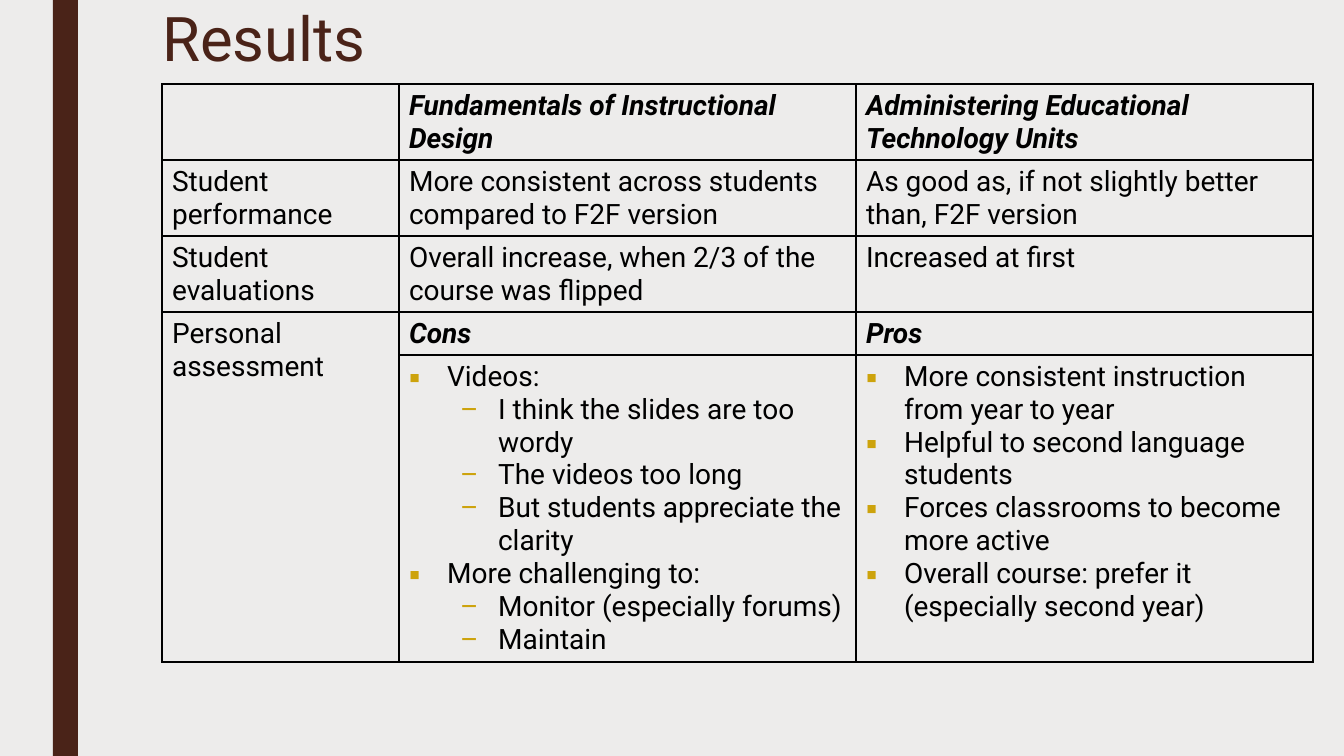
from lxml import etree
from pptx import Presentation
from pptx.dml.color import RGBColor
from pptx.enum.shapes import MSO_SHAPE
from pptx.enum.text import MSO_ANCHOR, MSO_AUTO_SIZE, PP_ALIGN
from pptx.oxml.ns import qn
from pptx.util import Emu, Pt

RECT = MSO_SHAPE.RECTANGLE
TOP, MIDDLE, BOTTOM = MSO_ANCHOR.TOP, MSO_ANCHOR.MIDDLE, MSO_ANCHOR.BOTTOM
LEFT = PP_ALIGN.LEFT
NO_AUTOFIT = MSO_AUTO_SIZE.NONE

EMU_PER_PX = 914400 / 100.8
FONT = "Roboto"
COLORS = {
    "background": "EDECEB",
    "brown": "4A2318",
    "black": "000000",
    "gold": "CDA30C",
}
COLUMN_WIDTHS = [237, 457, 457]
ROW_HEIGHTS = [76, 76, 76, 43, 307]
EMPHASIS_ROWS = (0, 3)
BULLETS = ["▪", "–"]
BULLET_MARGINS = [38, 89]
HANGING = 38

ROWS = [
    ["", "Fundamentals of Instructional Design", "Administering Educational Technology Units"],
    [
        "Student performance",
        "More consistent across students compared to F2F version",
        "As good as, if not slightly better than, F2F version",
    ],
    ["Student evaluations", "Overall increase, when 2/3 of the course was flipped", "Increased at first"],
    ["Personal assessment", "Cons", "Pros"],
]
# Each list item is (level, text).
CONS = [
    (0, "Videos:"),
    (1, "I think the slides are too wordy"),
    (1, "The videos too long"),
    (1, "But students appreciate the clarity"),
    (0, "More challenging to:"),
    (1, "Monitor (especially forums)"),
    (1, "Maintain"),
]
PROS = [
    (0, "More consistent instruction from year to year"),
    (0, "Helpful to second language students"),
    (0, "Forces classrooms to become more active"),
    (0, "Overall course: prefer it (especially second year)"),
]


def px(n):
    return Emu(round(n * EMU_PER_PX))


def format_runs(p, size, color, emphasis=False):
    for r in p.runs:
        r.font.name = FONT
        r.font.size = Pt(size)
        r.font.bold = r.font.italic = emphasis
        r.font.color.rgb = RGBColor.from_string(COLORS[color])


prs = Presentation()
prs.slide_width, prs.slide_height = px(1344), px(756)
s = prs.slides.add_slide(prs.slide_layouts[5])
s.background.fill.solid()
s.background.fill.fore_color.rgb = RGBColor.from_string(COLORS["background"])

# Side bar
bar = s.shapes.add_shape(RECT, px(53), px(0), px(25), px(756))
bar.shadow.inherit = False
bar.fill.solid()
bar.fill.fore_color.rgb = RGBColor.from_string(COLORS["brown"])
bar.line.fill.background()

# Title
title = s.shapes.title
title.left, title.top, title.width, title.height = px(152), px(0), px(1058), px(84)
tf = title.text_frame
tf.text = "Results"
tf.auto_size = NO_AUTOFIT
tf.vertical_anchor = MIDDLE
p = tf.paragraphs[0]
p.alignment = LEFT
p.line_spacing = 0.89
format_runs(p, 44, "brown")

# Results table
table = s.shapes.add_table(
    len(ROW_HEIGHTS), len(COLUMN_WIDTHS),
    px(162), px(84), px(sum(COLUMN_WIDTHS)), px(sum(ROW_HEIGHTS)),
).table
table.first_row = table.horz_banding = False
for column, width in zip(table.columns, COLUMN_WIDTHS):
    column.width = px(width)
for row, height in zip(table.rows, ROW_HEIGHTS):
    row.height = px(height)

for cell in table.iter_cells():
    tcPr = cell._tc.get_or_add_tcPr()
    for side in ("a:lnL", "a:lnR", "a:lnT", "a:lnB"):
        ln = etree.SubElement(tcPr, qn(side), w=str(Pt(1)))
        fill = etree.SubElement(ln, qn("a:solidFill"))
        etree.SubElement(fill, qn("a:srgbClr"), val=COLORS["black"])
    cell.fill.background()

for i, texts in enumerate(ROWS):
    for j, text in enumerate(texts):
        cell = table.cell(i, j)
        cell.text_frame.text = text
        cell.vertical_anchor = BOTTOM if i == 0 else TOP
        format_runs(cell.text_frame.paragraphs[0], 20, "black", i in EMPHASIS_ROWS and j > 0)
table.cell(3, 0).merge(table.cell(4, 0))

# Bulleted lists
for j, items in enumerate((CONS, PROS), start=1):
    tf = table.cell(4, j).text_frame
    tf.text = "\n".join(text for level, text in items)
    for p, (level, text) in zip(tf.paragraphs, items):
        p.level = level
        format_runs(p, 20, "black")
        pPr = p._p.get_or_add_pPr()
        pPr.set("marL", str(px(BULLET_MARGINS[level])))
        pPr.set("indent", str(px(-HANGING)))
        color = etree.SubElement(pPr, qn("a:buClr"))
        etree.SubElement(color, qn("a:srgbClr"), val=COLORS["gold"])
        etree.SubElement(pPr, qn("a:buFont"), typeface=FONT)
        etree.SubElement(pPr, qn("a:buChar"), char=BULLETS[level])

prs.save("out.pptx")
